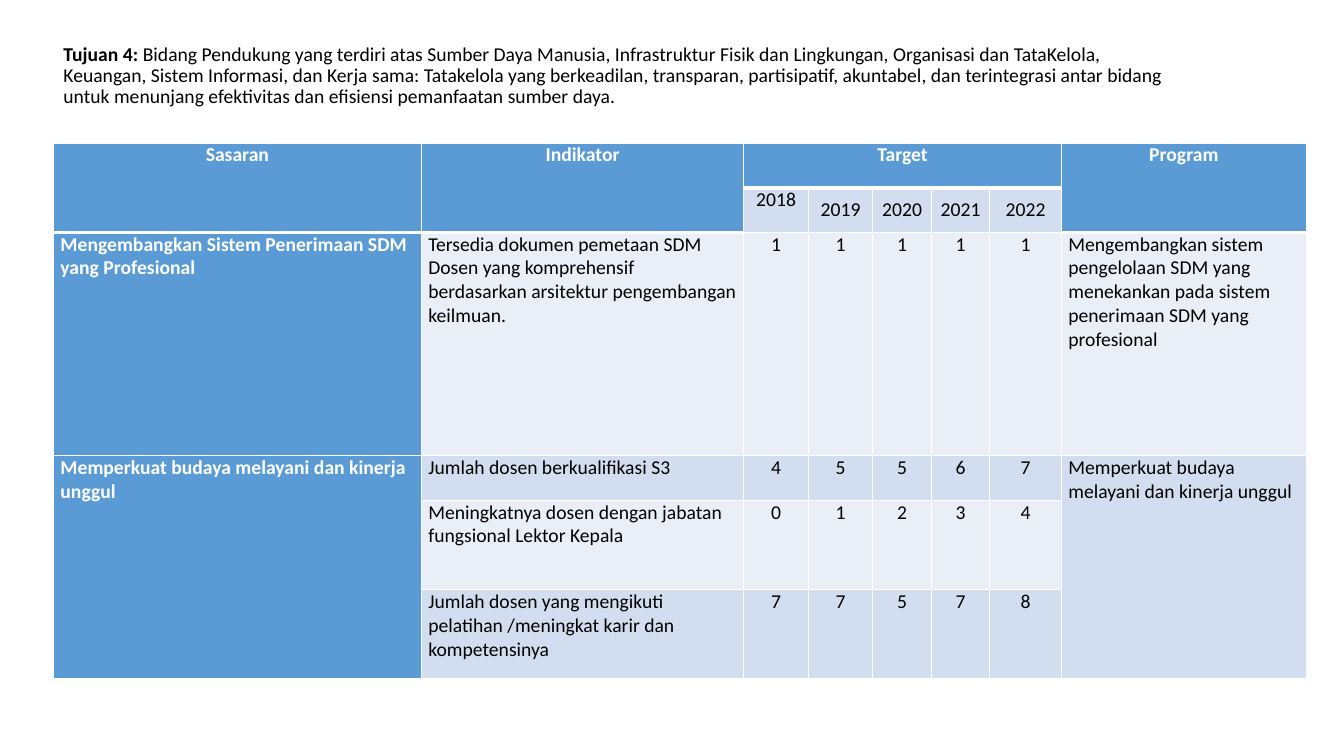
from lxml import etree
from pptx import Presentation
from pptx.dml.color import RGBColor
from pptx.enum.text import MSO_ANCHOR, PP_ALIGN
from pptx.oxml.ns import qn
from pptx.util import Pt

LEFT, CENTER = PP_ALIGN.LEFT, PP_ALIGN.CENTER
TOP, MIDDLE = MSO_ANCHOR.TOP, MSO_ANCHOR.MIDDLE

COLORS = {
    "text": "000000",
    "white": "FFFFFF",
    "header": "5B9BD5",
    "dark_band": "D2DEEF",
    "light_band": "EAEFF7",
}
TITLE_BOX = (38.2, 21.6, 812.9, 65.5)
TABLE_BOX = (38.2, 102.2, 895, 383)
COLUMN_WIDTHS = [262.8, 230.4, 46.1, 46.1, 41.8, 41.8, 51.1, 175]
ROW_UNITS = [1, 1, 5, 1, 2, 2]
YEAR_ROW = 1
SASARAN, FIRST_YEAR, LAST_YEAR, PROGRAM = 0, 2, 6, 7
MERGES = [
    ((0, 0), (1, 0)),
    ((0, 1), (1, 1)),
    ((0, 2), (0, 6)),
    ((0, 7), (1, 7)),
    ((3, 0), (5, 0)),
    ((3, 7), (5, 7)),
]
ROWS = [
    ["Sasaran", "Indikator", "Target", "", "", "", "", "Program"],
    ["", "", "2018", "2019", "2020", "2021", "2022", ""],
    ["Mengembangkan Sistem Penerimaan SDM yang Profesional",
     "Tersedia dokumen pemetaan SDM Dosen yang komprehensif berdasarkan "
     "arsitektur pengembangan keilmuan.",
     "1", "1", "1", "1", "1",
     "Mengembangkan sistem pengelolaan SDM yang menekankan pada sistem "
     "penerimaan SDM yang profesional"],
    ["Memperkuat budaya melayani dan kinerja unggul",
     "Jumlah dosen berkualifikasi S3", "4", "5", "5", "6", "7",
     "Memperkuat budaya melayani dan kinerja unggul"],
    ["", "Meningkatnya dosen dengan jabatan fungsional Lektor Kepala",
     "0", "1", "2", "3", "4", ""],
    ["", "Jumlah dosen yang mengikuti pelatihan /meningkat karir dan kompetensinya",
     "7", "7", "5", "7", "8", ""],
]


def add_text(para, text, color="text", bold=False, align=LEFT, spacing=1.0):
    """Add a formatted span of text to a paragraph."""
    para.alignment = align
    para.line_spacing = spacing
    span = para.add_run()
    span.text = text
    span.font.name = "Calibri"
    span.font.size = Pt(14)
    span.font.bold = bold
    span.font.color.rgb = RGBColor.from_string(COLORS[color])


def add_borders(cell, bottom):
    """Draw white borders around a cell, with its own bottom width."""
    properties = cell._tc.get_or_add_tcPr()
    for side, width in (("L", 1), ("R", 1), ("T", 1), ("B", bottom)):
        line = etree.SubElement(properties, qn(f"a:ln{side}"), w=str(Pt(width)))
        fill = etree.SubElement(line, qn("a:solidFill"))
        etree.SubElement(fill, qn("a:srgbClr"), val=COLORS["white"])


def add_title(page, left, top, width, height):
    """Place the goal statement in the given box."""
    box = page.shapes.add_textbox(Pt(left), Pt(top), Pt(width), Pt(height))
    frame = box.text_frame
    frame.word_wrap = True
    frame.vertical_anchor = MIDDLE
    para = frame.paragraphs[0]
    add_text(para, "Tujuan 4: ", bold=True, spacing=0.9)
    add_text(
        para,
        "Bidang Pendukung yang terdiri atas Sumber Daya Manusia, Infrastruktur "
        "Fisik dan Lingkungan, Organisasi dan TataKelola, Keuangan, Sistem "
        "Informasi, dan Kerja sama: Tatakelola yang berkeadilan, transparan, "
        "partisipatif, akuntabel, dan terintegrasi antar bidang untuk menunjang "
        "efektivitas dan efisiensi pemanfaatan sumber daya.",
        spacing=0.9,
    )


def format_cell(cell, row, column, text):
    """Fill one table cell according to its row and column."""
    is_year_column = FIRST_YEAR <= column <= LAST_YEAR
    in_header = row == 0 or (row == YEAR_ROW and not is_year_column)
    is_blue = in_header or column == SASARAN
    if is_blue:
        fill = "header"
    elif row % 2 or (column == PROGRAM and row > 2):
        fill = "dark_band"
    else:
        fill = "light_band"
    add_borders(cell, bottom=3 if in_header else 1)
    cell.fill.solid()
    cell.fill.fore_color.rgb = RGBColor.from_string(COLORS[fill])
    cell.margin_left = cell.margin_right = Pt(5)
    cell.margin_top = cell.margin_bottom = 0
    is_lowered = row == YEAR_ROW and column > FIRST_YEAR
    cell.vertical_anchor = MIDDLE if is_lowered else TOP
    if text:
        add_text(
            cell.text_frame.paragraphs[0],
            text,
            color="white" if is_blue else "text",
            bold=is_blue,
            align=CENTER if in_header or is_year_column else LEFT,
        )


def add_targets(page, left, top, width, height):
    """Place the table of yearly targets in the given box."""
    frame = page.shapes.add_table(
        len(ROWS), len(COLUMN_WIDTHS), Pt(left), Pt(top), Pt(width), Pt(height)
    )
    table = frame.table
    table.first_row = table.horz_banding = False
    for column, share in zip(table.columns, COLUMN_WIDTHS):
        column.width = Pt(width * share / sum(COLUMN_WIDTHS))
    for row, units in zip(table.rows, ROW_UNITS):
        row.height = Pt(height * units / sum(ROW_UNITS))
    for row, texts in enumerate(ROWS):
        for column, text in enumerate(texts):
            format_cell(table.cell(row, column), row, column, text)
    for first, last in MERGES:
        table.cell(*first).merge(table.cell(*last))


def main():
    """Build the slide and save the deck."""
    deck = Presentation()
    deck.slide_width, deck.slide_height = Pt(960), Pt(540)
    page = deck.slides.add_slide(deck.slide_layouts[6])
    add_title(page, *TITLE_BOX)
    add_targets(page, *TABLE_BOX)
    deck.save("out.pptx")


if __name__ == "__main__":
    main()
